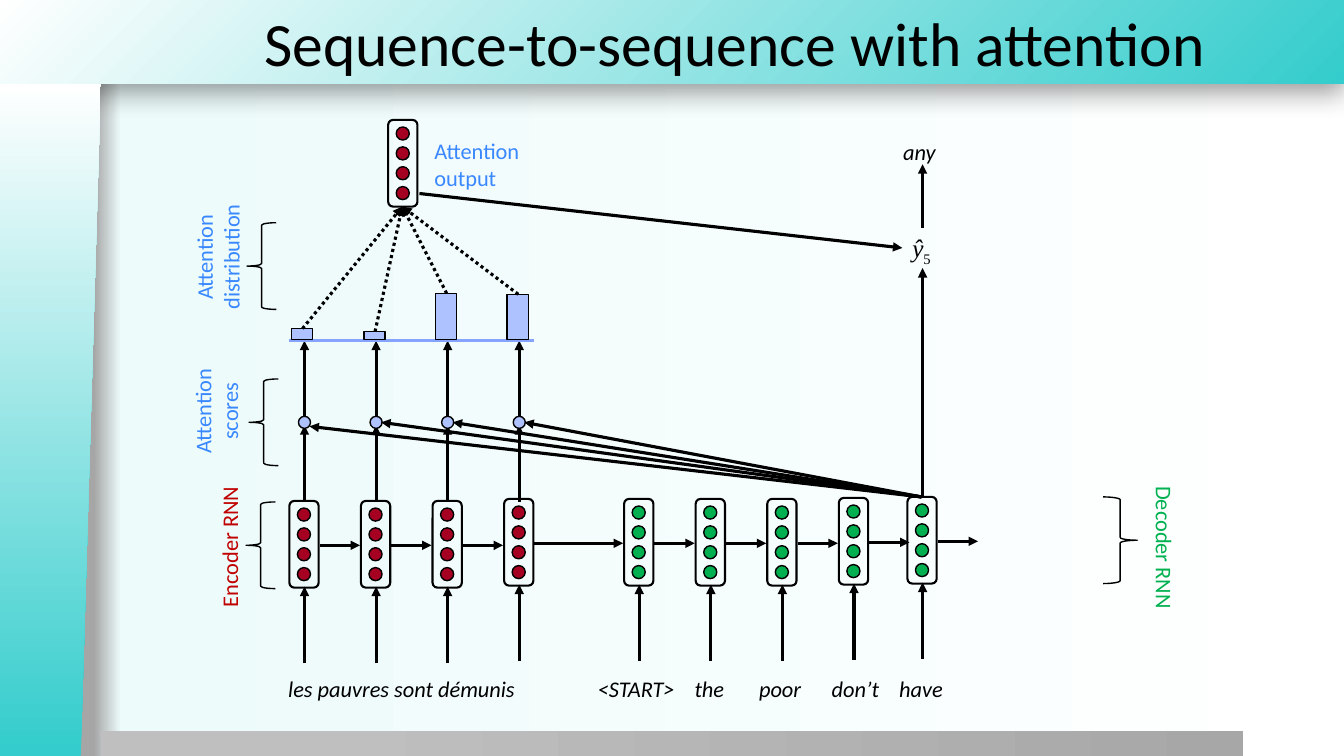
from lxml import etree
from pptx import Presentation
from pptx import util as u
from pptx.dml.color import RGBColor
from pptx.enum import dml, shapes, text
from pptx.oxml.ns import qn

COLORS = {
    "ink": "000000", "teal": "34CCCC", "white": "FFFFFF", "mint": "EDFBFB",
    "edge": "A6A6A6", "silver": "BFBFBF", "gray": "A7A7A7",
    "encoder": "A50021", "decoder": "00B050", "encoder_label": "C10000",
    "decoder_label": "00B150", "attention": "3A88FF", "bar": "ADC2FF", "axis": "85A3FF",
}
SHAPE = shapes.MSO_SHAPE
PITCH = 0.71
CELL_W, CELL_H = 0.29, 0.86
MID = 0.15  # from a cell's left edge to its arrows


def rgb(name):
    return RGBColor.from_string(COLORS[name])


def add_shape(parent, kind, x, y, w, h, fill=None, line=None):
    sp = parent.add_shape(kind, *map(u.Inches, (x, y, w, h)))
    sp.shadow.inherit = False
    if fill:
        sp.fill.solid()
        sp.fill.fore_color.rgb = rgb(fill)
    else:
        sp.fill.background()
    if line:
        sp.line.color.rgb = rgb("ink")
        sp.line.width = u.Pt(line)
    else:
        sp.line.fill.background()
    return sp


def add_line(parent, x1, y1, x2, y2, color="ink", arrow=True, dotted=False):
    cn = parent.add_connector(shapes.MSO_CONNECTOR.STRAIGHT, *map(u.Inches, (x1, y1, x2, y2)))
    cn.line.color.rgb = rgb(color)
    cn.line.width = u.Pt(2.25)
    if dotted:
        cn.line.dash_style = dml.MSO_LINE.ROUND_DOT
    if arrow:
        ln = cn.element.spPr.find(qn("a:ln"))
        etree.SubElement(ln, qn("a:tailEnd"), type="triangle")
    etree.SubElement(cn.element.spPr, qn("a:effectLst"))


def add_run(p, words, color="ink", size=16, italic=False, font="Calibri"):
    r = p.add_run()
    r.text = words
    r.font.name, r.font.size, r.font.italic = font, u.Pt(size), italic
    r.font.color.rgb = rgb(color)
    return r


def add_text(parent, x, y, w, h, lines=(), color="ink", italic=False,
             wrap=False, centered=False, turn=0):
    box = parent.add_textbox(*map(u.Inches, (x, y, w, h)))
    box.rotation = turn
    tf = box.text_frame
    tf.word_wrap = wrap
    tf.auto_size = text.MSO_AUTO_SIZE.SHAPE_TO_FIT_TEXT
    for i, words in enumerate(lines):
        p = tf.add_paragraph() if i else tf.paragraphs[0]
        if centered:
            p.alignment = text.PP_ALIGN.CENTER
        add_run(p, words, color, italic=italic)
    return tf.paragraphs[0]


def set_gradient(fill, element, stops, radial=False):
    fill.gradient()
    grad = next(element.iter(qn("a:gradFill")))
    for child in list(grad):
        grad.remove(child)
    grad.set("rotWithShape", "1")
    gs_list = etree.SubElement(grad, qn("a:gsLst"))
    for pos, color in stops:
        gs = etree.SubElement(gs_list, qn("a:gs"), pos=str(pos * 1000))
        etree.SubElement(gs, qn("a:srgbClr"), val=COLORS[color])
    if radial:
        way = etree.SubElement(grad, qn("a:path"), path="circle")
        etree.SubElement(way, qn("a:fillToRect"), l="100000", t="100000")
    else:
        etree.SubElement(grad, qn("a:lin"), ang="0", scaled="0")


def backdrop(s):
    set_gradient(s.background.fill, s.element, [(7, "edge"), (9, "mint"), (100, "white")])
    # Header band with a soft shadow below it
    header = add_shape(s.shapes, SHAPE.RECTANGLE, -0.01, 0, 13.34, 0.83)
    set_gradient(header.fill, header.element, [(0, "teal"), (100, "white")], radial=True)
    effects = header.element.spPr.find(qn("a:effectLst"))
    shadow = etree.SubElement(effects, qn("a:outerShdw"), blurRad=str(u.Pt(20)),
                              dist=str(u.Pt(6)), dir="5400000", algn="t", rotWithShape="0")
    tint = etree.SubElement(shadow, qn("a:srgbClr"), val=COLORS["ink"])
    etree.SubElement(tint, qn("a:alpha"), val="40000")
    # Footer band and slanted side band
    footer = add_shape(s.shapes, SHAPE.RECTANGLE, 1, 7.25, 11.33, 0.26)
    set_gradient(footer.fill, footer.element, [(20, "silver"), (100, "gray")])
    side = add_shape(s.shapes, SHAPE.FLOWCHART_MANUAL_INPUT, -2.84, 3.67, 6.68, 1)
    side.rotation = 270
    side.element.spPr.find(qn("a:xfrm")).set("flipV", "1")
    set_gradient(side.fill, side.element, [(1, "teal"), (100, "white")])


def title(s, x, y, w, h):
    sp = s.shapes.title
    s.shapes.element.append(sp.element)  # in front of the header band
    sp.left, sp.top, sp.width, sp.height = map(u.Inches, (x, y, w, h))
    tf = sp.text_frame
    tf.auto_size = text.MSO_AUTO_SIZE.NONE
    tf.vertical_anchor = text.MSO_ANCHOR.MIDDLE
    p = tf.paragraphs[0]
    p.alignment = text.PP_ALIGN.LEFT
    add_run(p, "Sequence-to-sequence with attention", size=44)


def rnn_cell(s, x, y, color, step=0):
    """State vector; step is the length of the arrow to the next state."""
    group = s.shapes.add_group_shape().shapes
    add_shape(group, SHAPE.ROUNDED_RECTANGLE, x, y, CELL_W, CELL_H, line=1.5)
    for i in range(4):
        add_shape(group, SHAPE.OVAL, x + 0.08, y + 0.07 + 0.197 * i, 0.13, 0.13, color, 1)
    if step:
        add_line(group, x + MID, y + 1.61, x + MID, y + 0.85)
        add_line(group, x + 0.3, y + 0.44, x + 0.3 + step, y + 0.44)


def brace(s, x, y, w=CELL_W, kind=SHAPE.LEFT_BRACE):
    add_shape(s.shapes, kind, x, y, w, CELL_H, line=1)


def encoder(s, x, y):
    for i in range(3):
        rnn_cell(s, x + PITCH * i, y, "encoder", 0.4)
    rnn_cell(s, x + PITCH * 3, y - 0.02, "encoder", 0.88)
    brace(s, x - 0.43, y + 0.01)
    add_text(s.shapes, x - 1.3, y + 0.26, 1.41, 0.37, ["Encoder RNN"], "encoder_label", turn=270)
    add_text(s.shapes, x - 0.11, y + 1.68, 2.75, 0.37, ["les pauvres sont démunis"], italic=True)


def decoder(s, x, y):
    for dx, dy in [(0, 0), (PITCH, 0), (2 * PITCH, 0), (3 * PITCH, -0.01), (2.81, -0.02)]:
        rnn_cell(s, x + dx, y + dy, "decoder", 0.4)
    brace(s, x + 4.75, y - 0.02, 0.34, SHAPE.RIGHT_BRACE)
    add_text(s.shapes, x + 4.64, y + 0.31, 1.44, 0.37, ["Decoder RNN"], "decoder_label", turn=90)
    # Input words on tab stops
    p = add_text(s.shapes, x - 0.36, y + 1.7, 5.28, 0.37, wrap=True)
    tabs = etree.SubElement(p._p.get_or_add_pPr(), qn("a:tabLst"))
    for stop in (0.96, 1.6, 2.32, 2.99):
        etree.SubElement(tabs, qn("a:tab"), pos=str(u.Inches(stop)), algn="l")
    add_run(p, "<START>\tthe\tpoor\tdon’t\thave", italic=True)
    # Prediction above the last state
    out = x + 2.96
    add_line(s.shapes, out, y - 0.03, out, y - 2.29)
    p = add_text(s.shapes, out - 0.2, y - 2.69, 0.4, 0.4)
    add_run(p, "ŷ", size=18, italic=True, font="Times New Roman")
    sub = add_run(p, "5", size=18, font="Times New Roman")
    sub.font._element.set("baseline", "-25000")
    add_line(s.shapes, out, y - 2.69, out, y - 3.32)
    add_text(s.shapes, out - 0.29, y - 3.63, 0.56, 0.37, ["any"], italic=True)


def attention(s, x, y, query_x, query_y):
    # Scores: one per encoder state, each fed by the decoder state
    score_y, axis_y = y + 3, y + 2.19
    for i in range(4):
        c = x + MID + PITCH * i
        group = s.shapes.add_group_shape().shapes
        add_line(group, c, y + 3.79, c, score_y + 0.03)
        add_shape(group, SHAPE.OVAL, c - 0.06, score_y - 0.06, 0.12, 0.12, "bar", 1)
        add_line(s.shapes, query_x, query_y, c + 0.05, score_y + (0 if i else 0.04))
        add_line(s.shapes, c, score_y - 0.06, c, axis_y)
    # Distribution bars, weighted into the output vector
    add_line(s.shapes, x, axis_y, x + 2.43, axis_y, "axis", arrow=False)
    for i, bar_h in enumerate([0.11, 0.08, 0.46, 0.45]):
        c, bar_y = x + MID - 0.02 + PITCH * i + 0.01 * (i > 0), axis_y - 0.01 - bar_h
        add_shape(s.shapes, SHAPE.RECTANGLE, c - 0.11, bar_y, 0.21, bar_h, "bar", 1)
        add_line(s.shapes, c, bar_y, x + 1.12, y + 0.86, dotted=True)
    rnn_cell(s, x + 0.98, y, "encoder")
    add_line(s.shapes, x + 1.29, y + 0.73, x + 6.08, y + 1.27)
    # Labels
    add_text(s.shapes, x + 1.34, y + 0.12, 1.07, 0.64, ["Attention", "output"], "attention", wrap=True)
    brace(s, x - 0.42, y + 1.02)
    brace(s, x - 0.4, y + 2.57)
    for dx, dy, w, word in [(-1.34, 1.04, 1.26, "distribution"), (-1.26, 2.57, 1.07, "scores")]:
        add_text(s.shapes, x + dx, y + dy, w, 0.64, ["Attention", word], "attention",
                 wrap=True, centered=True, turn=270)


def main():
    prs = Presentation()
    prs.slide_width, prs.slide_height = u.Inches(13.33), u.Inches(7.5)
    s = prs.slides.add_slide(prs.slide_layouts[5])
    backdrop(s)
    title(s, 2.52, 0, 10.83, 0.83)
    encoder(s, 2.87, 4.97)
    decoder(s, 6.19, 4.95)
    attention(s, 2.87, 1.19, 9.14, 4.93)
    prs.save("out.pptx")


if __name__ == "__main__":
    main()
